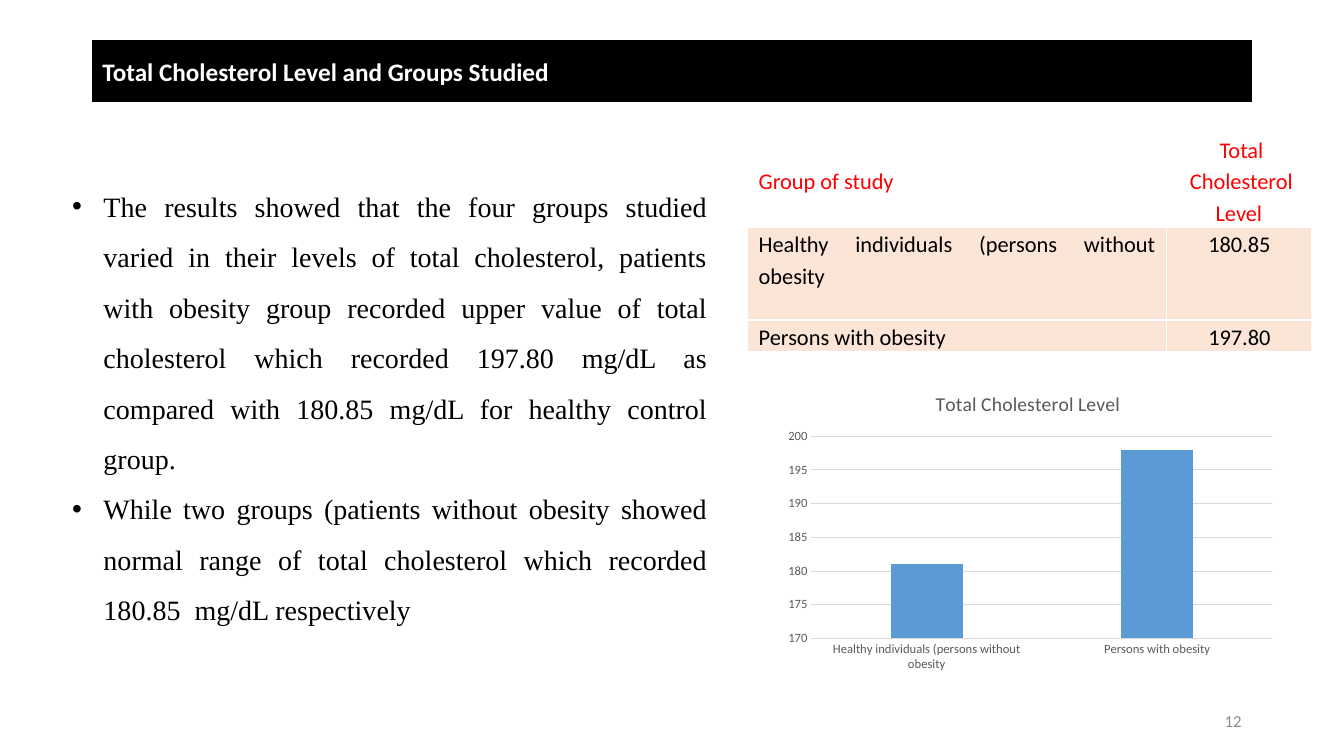
import pptx
import pptx.chart.data
import pptx.dml.color
import pptx.enum.chart
import pptx.enum.text
import pptx.oxml
import pptx.oxml.ns
import pptx.util

HUES = {
    "black": "000000", "white": "FFFFFF", "red": "FF0000", "peach": "FBE5D6",
    "blue": "5B9BD5", "text": "595959", "grid": "D9D9D9", "page": "8C8C8C",
}
COLS, ROWS = 32, 18
ALIGN = pptx.enum.text.PP_ALIGN
MID = pptx.enum.text.MSO_ANCHOR.MIDDLE
TICK = pptx.enum.chart.XL_TICK_MARK.NONE


def hue(name):
    return pptx.dml.color.RGBColor.from_string(HUES[name])


def node(tag, inner="", **attrs):
    pairs = "".join(f' {key}="{val}"' for key, val in attrs.items())
    space = pptx.oxml.ns.nsdecls("a")
    return pptx.oxml.parse_xml(f"<a:{tag} {space}{pairs}>{inner}</a:{tag}>")


class Deck:
    """Holds the style and the current slide; lengths are grid units."""

    def __init__(self):
        self.file = pptx.Presentation()
        self.file.slide_width = pptx.util.Inches(13.33)
        self.file.slide_height = pptx.util.Inches(7.5)
        self.slide = self.file.slides.add_slide(self.file.slide_layouts[1])
        self.sans, self.serif = "Calibri", "Times New Roman"

    def wide(self, cols):
        return round(self.file.slide_width * cols / COLS)

    def high(self, rows):
        return round(self.file.slide_height * rows / ROWS)

    def box(self, x, y, w, h):
        return self.wide(x), self.high(y), self.wide(w), self.high(h)

    def place(self, shape, *area):
        shape.left, shape.top, shape.width, shape.height = self.box(*area)

    def font(self, font, size, color, face=None, bold=False):
        font.size, font.name, font.bold = pptx.util.Pt(size), face or self.sans, bold
        font.color.rgb = hue(color)

    def para(self, para, size, color, align=ALIGN.LEFT, face=None, bold=False):
        para.alignment = align
        for run in para.runs:
            self.font(run.font, size, color, face, bold)

    def title(self, text, *area):
        shape = self.slide.shapes.title
        self.place(shape, *area)
        shape.fill.solid()
        shape.fill.fore_color.rgb = hue("black")
        shape.line.color.rgb = hue("black")
        shape.line.width = pptx.util.Pt(1)
        frame = shape.text_frame
        frame.text = text
        frame.vertical_anchor = MID
        frame.auto_size = pptx.enum.text.MSO_AUTO_SIZE.NONE
        self.para(frame.paragraphs[0], 18, "white", bold=True)

    def list(self, items, *area):
        shape = self.slide.placeholders[1]
        self.place(shape, *area)
        frame = shape.text_frame
        frame.text = "\n".join(items)
        frame.auto_size = pptx.enum.text.MSO_AUTO_SIZE.NONE
        for para in frame.paragraphs:
            self.para(para, 20, "black", ALIGN.JUSTIFY, self.serif)
            para.line_spacing = 1.5
            para.space_before = para.space_after = pptx.util.Pt(0)
            props = para._p.get_or_add_pPr()
            dent = pptx.util.Inches(0.31)
            props.set("marL", str(dent))
            props.set("indent", str(-dent))
            props.append(node("buFont", typeface="Arial"))
            props.append(node("buChar", char="•"))

    def cell(self, cell, text, color, align, fill=None):
        cell.text = text
        cell.margin_left = cell.margin_right = pptx.util.Inches(0.07)
        cell.margin_top = cell.margin_bottom = 0
        para = cell.text_frame.paragraphs[0]
        self.para(para, 16, color, align)
        para.line_spacing = 1.15
        props, dent = para._p.get_or_add_pPr(), str(pptx.util.Inches(0.04))
        props.set("marL", dent)
        if fill:
            props.set("marR", dent)
        # Borders come before the fill in the cell properties
        props = cell._tc.get_or_add_tcPr()
        paint = f'<a:solidFill><a:srgbClr val="{HUES["white"]}"/></a:solidFill>'
        for side in ("lnL", "lnR", "lnT", "lnB"):
            props.append(node(side, paint, w=pptx.util.Pt(1)))
        if fill:
            cell.fill.solid()
            cell.fill.fore_color.rgb = hue(fill)
        else:
            cell.fill.background()

    def table(self, rows, x, y, wides, highs):
        area = self.box(x, y, sum(wides), sum(highs))
        table = self.slide.shapes.add_table(len(rows), len(wides), *area).table
        table.first_row = table.horz_banding = False
        for col, width in zip(table.columns, wides):
            col.width = self.wide(width)
        for r, row in enumerate(rows):
            table.rows[r].height = self.high(highs[r])
            color, fill = ("black", "peach") if r else ("red", None)
            first = ALIGN.JUSTIFY if r else ALIGN.LEFT
            for c, text in enumerate(row):
                align = ALIGN.CENTER if c else first
                self.cell(table.cell(r, c), text, color, align, fill)
        table.cell(0, 0).vertical_anchor = MID

    def chart(self, name, data, *area):
        feed = pptx.chart.data.CategoryChartData()
        feed.categories = list(data)
        feed.add_series(name, [round(val) for val in data.values()])
        kind = pptx.enum.chart.XL_CHART_TYPE.COLUMN_CLUSTERED
        chart = self.slide.shapes.add_chart(kind, *self.box(*area), feed).chart
        self.font(chart.font, 10, "black")
        chart.has_legend = False
        chart.has_title = True
        chart.chart_title.text_frame.text = name
        self.para(chart.chart_title.text_frame.paragraphs[0], 14, "text", ALIGN.CENTER)
        # Bars
        plot = chart.plots[0]
        plot.gap_width, plot.overlap, plot.vary_by_categories = 219, -27, False
        fill = plot.series[0].format.fill
        fill.solid()
        fill.fore_color.rgb = hue("blue")
        # Axes
        cats, vals = chart.category_axis, chart.value_axis
        for axis in (cats, vals):
            axis.major_tick_mark = axis.minor_tick_mark = TICK
            self.font(axis.tick_labels.font, 9, "text")
        vals.minimum_scale, vals.maximum_scale, vals.major_unit = 170, 200, 5
        vals.tick_labels.number_format = "0"
        vals.tick_labels.number_format_is_linked = False
        vals.format.line.fill.background()
        for line in (cats.format.line, vals.major_gridlines.format.line):
            line.color.rgb = hue("grid")
            line.width = pptx.util.Pt(0.75)

    def page(self, text, *area):
        frame = self.slide.shapes.add_textbox(*self.box(*area)).text_frame
        frame.word_wrap = True
        frame.text = text
        frame.vertical_anchor = MID
        self.para(frame.paragraphs[0], 12, "page", ALIGN.RIGHT)


def main():
    deck = Deck()
    level = "Total Cholesterol Level "
    well, obese = "Healthy individuals (persons without obesity", "Persons with obesity"
    data = {well: 180.85, obese: 197.80}

    # Heading and findings
    deck.title("Total Cholesterol Level and Groups Studied", 2.2, 0.96, 27.6, 1.46)
    deck.list([
        "The results showed that the four groups studied varied in their levels of "
        "total cholesterol, patients with obesity group recorded upper value of total "
        "cholesterol which recorded 197.80 mg/dL as compared with 180.85 mg/dL for "
        "healthy control group. ",
        "While two groups (patients without obesity showed normal range of total "
        "cholesterol which recorded 180.85  mg/dL respectively",
    ], 1.48, 3.99, 15.6, 11)

    # Table and chart of the same two values
    rows = [("Group of study", level)]
    rows += [(group, f"{val:.2f}") for group, val in data.items()]
    deck.table(rows, 17.8, 3.16, (9.98, 3.46), (2.18, 2.21, 0.74))
    deck.chart(level, data, 18.53, 8.94, 12, 7.2)

    deck.page("12", 22.6, 16.68, 7.2, 0.96)
    deck.file.save("out.pptx")


if __name__ == "__main__":
    main()
